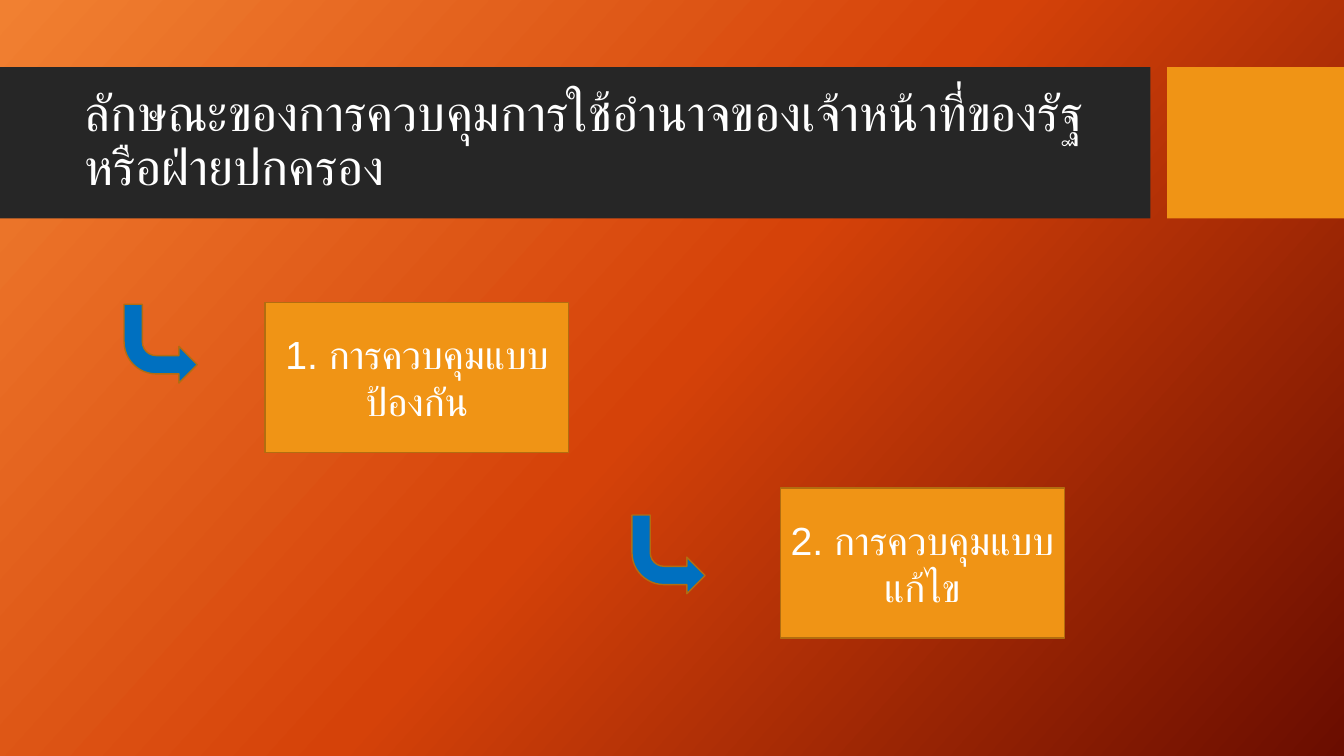
from copy import deepcopy
from pptx import Presentation
from pptx.dml.color import RGBColor
from pptx.enum.lang import MSO_LANGUAGE_ID as LANG
from pptx.enum.shapes import MSO_SHAPE as SHAPE
from pptx.enum.text import MSO_ANCHOR as ANCHOR, PP_ALIGN as ALIGN
from pptx.util import Pt

TITLE = "ลักษณะของการควบคุมการใช้อำนาจของเจ้าหน้าที่ของรัฐ หรือฝ่ายปกครอง"
CONTROLS = [
    {"text": "1. การควบคุมแบบป้องกัน", "box": (189.4, 216, 216.7, 107.3), "arrow": (88.6, 217.4)},
    {"text": "2. การควบคุมแบบแก้ไข", "box": (557.3, 348.5, 203, 107.3), "arrow": (451.4, 367.9)},
]
COLORS = {
    "band": "262626", "accent": "F09415", "outline": "B26D10",
    "arrow": "0070C0", "text": "FFFFFF",
}
BACKGROUND = [(0, "F18031"), (0.5, "D54209"), (1, "6A0D00")]
BACKGROUND_ANGLE = 42
SLIDE_WIDTH, SLIDE_HEIGHT = 960, 540
BAND_TOP, BAND_HEIGHT, BAND_WIDTH = 48, 108, 821.7
TAB_LEFT = 833.6
TITLE_FRAME = (53.3, 59, 756.7, 85)
ARROW_SIZE = (52.3, 56.2)
TITLE_FORMAT = {"name": "Lato", "size": Pt(36), "language_id": LANG.THAI}
CONTROL_FORMAT = {"name": "Arial", "size": Pt(28), "language_id": LANG.THAI}


def rgb(name):
    return RGBColor.from_string(COLORS[name])


def paint_background(slide):
    fill = slide.background.fill
    fill.gradient()
    fill.gradient_angle = 360 - BACKGROUND_ANGLE
    stop_list = slide.element.xpath(".//a:gsLst")[0]
    stop_list.append(deepcopy(stop_list[-1]))
    for stop, (position, color) in zip(fill.gradient_stops, BACKGROUND):
        stop.position = position
        stop.color.rgb = RGBColor.from_string(color)


def add_block(slide, kind, frame, fill, outlined=False):
    block = slide.shapes.add_shape(kind, *map(Pt, frame))
    block.shadow.inherit = False
    block.fill.solid()
    block.fill.fore_color.rgb = rgb(fill)
    if outlined:
        block.line.color.rgb = rgb("outline")
        block.line.width = Pt(1)
    else:
        block.line.fill.background()
    return block


def write(holder, text, font_format, align, spacing):
    frame = holder.text_frame
    frame.word_wrap = True
    frame.vertical_anchor = ANCHOR.MIDDLE
    paragraph = frame.paragraphs[0]
    paragraph.alignment = align
    paragraph.line_spacing = spacing
    run = paragraph.add_run()
    run.text = text
    for name, value in font_format.items():
        setattr(run.font, name, value)
    run.font.color.rgb = rgb("text")


def main():
    deck = Presentation()
    deck.slide_width, deck.slide_height = Pt(SLIDE_WIDTH), Pt(SLIDE_HEIGHT)
    slide = deck.slides.add_slide(deck.slide_layouts[6])
    paint_background(slide)

    add_block(slide, SHAPE.RECTANGLE, (0, BAND_TOP, BAND_WIDTH, BAND_HEIGHT), "band")
    tab_frame = (TAB_LEFT, BAND_TOP, SLIDE_WIDTH - TAB_LEFT, BAND_HEIGHT)
    add_block(slide, SHAPE.RECTANGLE, tab_frame, "accent")
    title = slide.shapes.add_textbox(*map(Pt, TITLE_FRAME))
    write(title, TITLE, TITLE_FORMAT, ALIGN.LEFT, 0.9)

    for control in CONTROLS:
        box = add_block(slide, SHAPE.RECTANGLE, control["box"], "accent", True)
        write(box, control["text"], CONTROL_FORMAT, ALIGN.CENTER, 1.0)
        arrow_frame = control["arrow"] + ARROW_SIZE
        arrow = add_block(slide, SHAPE.BENT_ARROW, arrow_frame, "arrow", True)
        arrow.element.spPr.xfrm.set("flipV", "1")

    deck.save("out.pptx")


if __name__ == "__main__":
    main()
